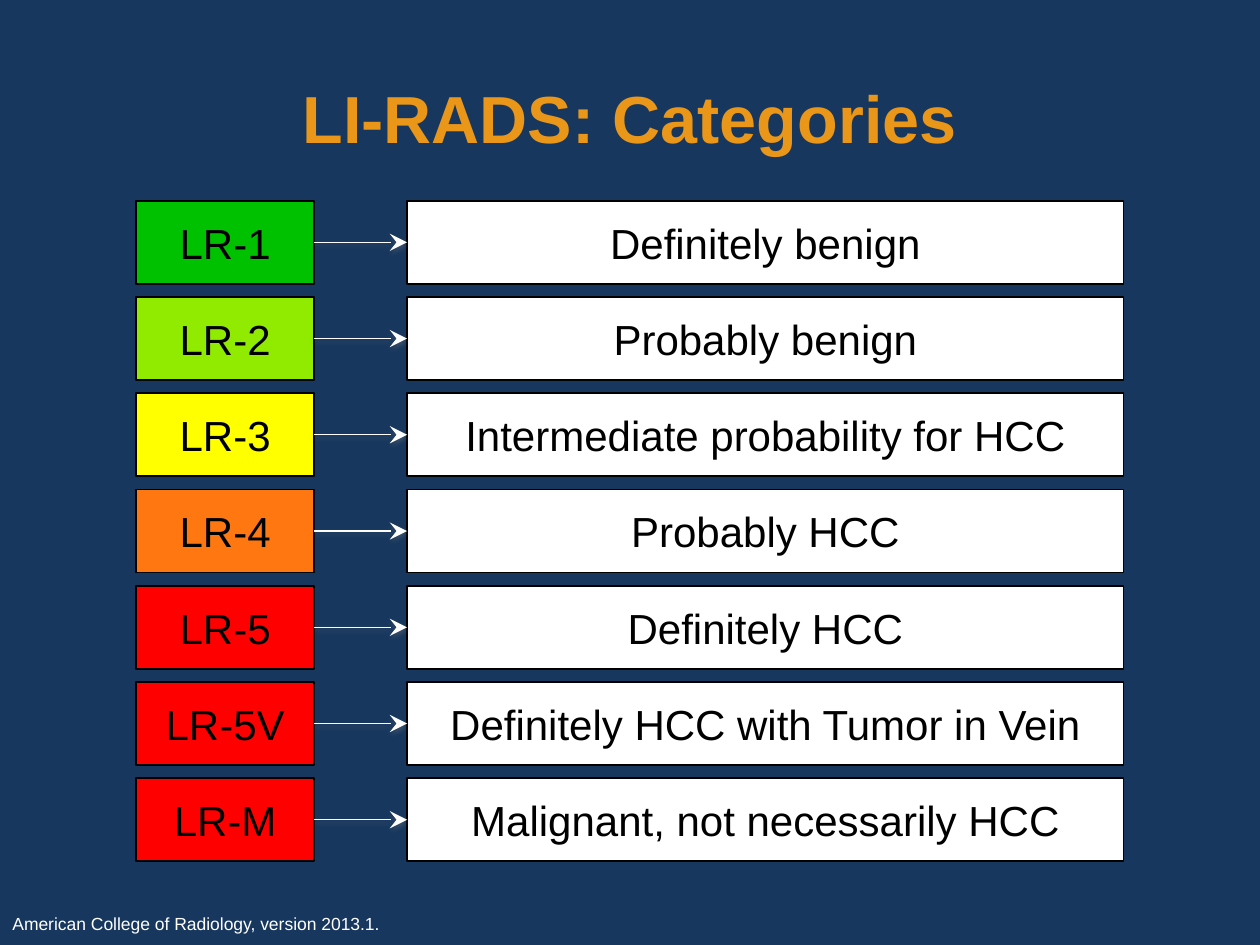
from lxml import etree
from pptx import Presentation
from pptx.dml.color import RGBColor
from pptx.enum import shapes, text
from pptx.oxml import ns
from pptx.util import Pt

FONT = "Arial"
COLORS = {
    "background": "17375E", "title": "E99619", "white": "FFFFFF", "black": "000000",
    "green": "00C100", "lime": "90EB00", "yellow": "FFFF00", "orange": "FF7711",
    "red": "FF0000", "shadow": "808080",
}
TITLE = "LI-RADS: Categories"
SOURCE = "American College of Radiology, version 2013.1."
CATEGORIES = [
    ("LR-1", "green", "Definitely benign"),
    ("LR-2", "lime", "Probably benign"),
    ("LR-3", "yellow", "Intermediate probability for HCC"),
    ("LR-4", "orange", "Probably HCC"),
    ("LR-5", "red", "Definitely HCC"),
    ("LR-5V", "red", "Definitely HCC with Tumor in Vein"),
    ("LR-M", "red", "Malignant, not necessarily HCC"),
]

FIRST_TOP, PITCH, ROW_HEIGHT = 114.7, 55, 47.5
CODE_LEFT, CODE_WIDTH = 77.9, 101.5
MEANING_LEFT, MEANING_WIDTH = 232.6, 409.4


def color(name):
    return RGBColor.from_string(COLORS[name])


def write(frame, words, size, ink, align, bold=False):
    paragraph = frame.paragraphs[0]
    paragraph.alignment = align
    run = paragraph.add_run()
    run.text = words
    run.font.name, run.font.size, run.font.bold = FONT, Pt(size), bold
    run.font.color.rgb = color(ink)


def add_box(slide, left, top, width, fill, words, side_inset):
    box = slide.shapes.add_shape(shapes.MSO_SHAPE.RECTANGLE,
                                 Pt(left), Pt(top), Pt(width), Pt(ROW_HEIGHT))
    box.shadow.inherit = False
    box.fill.solid()
    box.fill.fore_color.rgb = color(fill)
    box.line.color.rgb = color("black")
    box.line.width = Pt(1)
    frame = box.text_frame
    frame.word_wrap = True
    frame.vertical_anchor = text.MSO_ANCHOR.MIDDLE
    frame.margin_left = frame.margin_right = Pt(side_inset)
    frame.margin_top = frame.margin_bottom = 0
    write(frame, words, 24, "black", text.PP_ALIGN.CENTER)
    return box


def add_arrow(slide, code, meaning):
    """Join the two boxes with a softly shadowed arrow."""
    arrow = slide.shapes.add_connector(shapes.MSO_CONNECTOR.STRAIGHT, 0, 0, 0, 0)
    arrow.begin_connect(code, 3)
    arrow.end_connect(meaning, 1)
    arrow.line.color.rgb = color("white")
    arrow.line.width = Pt(0.75)
    etree.SubElement(arrow.line._get_or_add_ln(), ns.qn("a:tailEnd"),
                     type="stealth", w="lg", len="lg")
    effects = etree.SubElement(arrow._element.spPr, ns.qn("a:effectLst"))
    shadow = etree.SubElement(effects, ns.qn("a:outerShdw"), blurRad=str(Pt(3.1)),
                              dist=str(Pt(1.6)), dir="5400000", rotWithShape="0")
    tint = etree.SubElement(shadow, ns.qn("a:srgbClr"), val=COLORS["shadow"])
    etree.SubElement(tint, ns.qn("a:alpha"), val="38000")


def main():
    deck = Presentation()
    deck.slide_width, deck.slide_height = Pt(720), Pt(540)
    slide = deck.slides.add_slide(deck.slide_layouts[6])
    slide.background.fill.solid()
    slide.background.fill.fore_color.rgb = color("background")

    for row, (code_text, fill, meaning_text) in enumerate(CATEGORIES):
        top = FIRST_TOP + row * PITCH
        meaning = add_box(slide, MEANING_LEFT, top, MEANING_WIDTH, "white", meaning_text, 7.2)
        code = add_box(slide, CODE_LEFT, top, CODE_WIDTH, fill, code_text, 0)
        add_arrow(slide, code, meaning)

    title = slide.shapes.add_textbox(Pt(36), Pt(21.6), Pt(648), Pt(90)).text_frame
    title.word_wrap = True
    title.vertical_anchor = text.MSO_ANCHOR.MIDDLE
    write(title, TITLE, 38, "title", text.PP_ALIGN.CENTER, bold=True)

    source = slide.shapes.add_textbox(0, Pt(518.4), Pt(226.8), Pt(19.4)).text_frame
    source.word_wrap = False
    source.auto_size = text.MSO_AUTO_SIZE.SHAPE_TO_FIT_TEXT
    write(source, SOURCE, 10, "white", text.PP_ALIGN.LEFT)

    deck.save("out.pptx")


if __name__ == "__main__":
    main()
